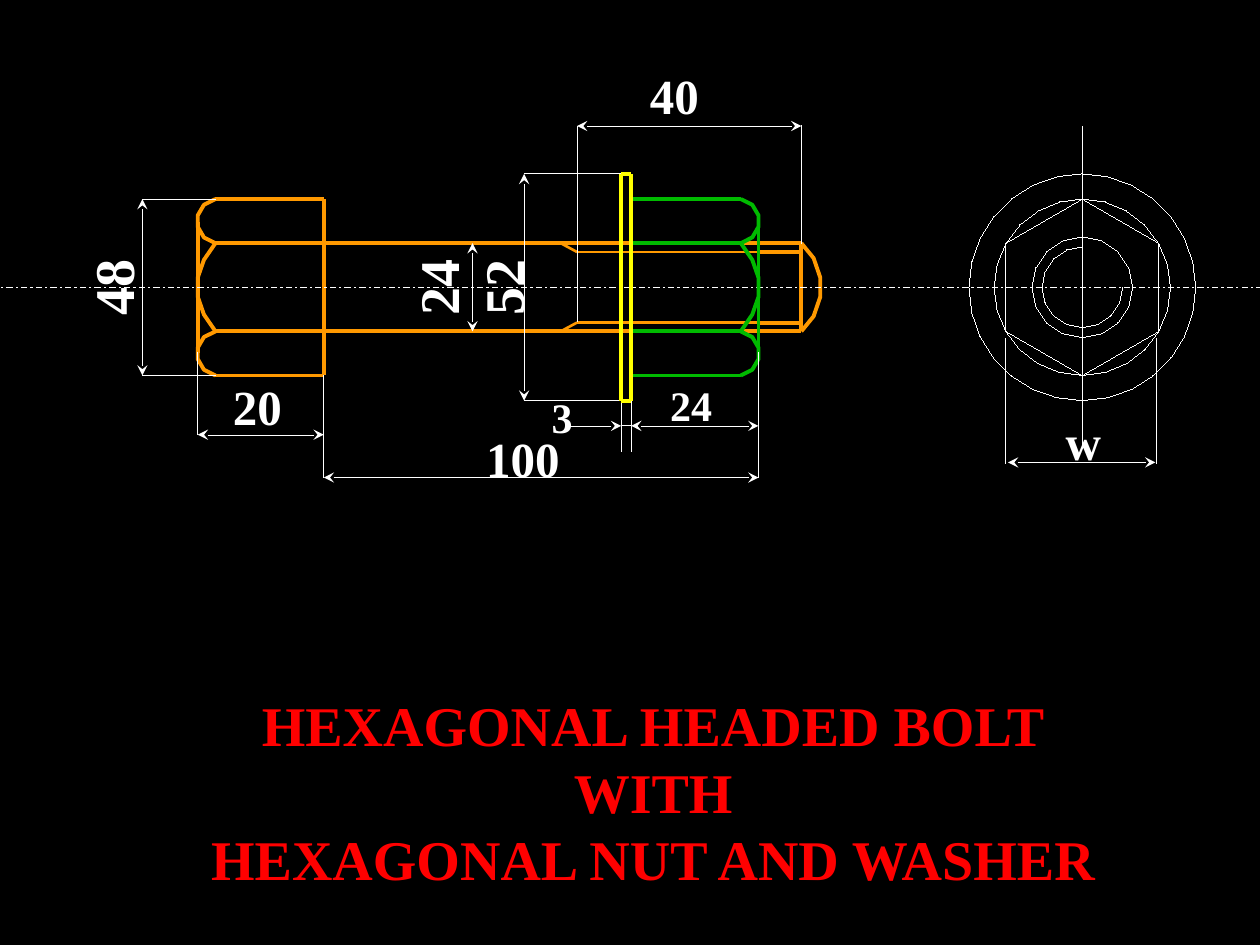
"""Draw a dimensioned hexagonal bolt with its nut and washer."""
import math

import pptx
import pptx.dml.color
import pptx.enum.dml
import pptx.enum.text
import pptx.oxml
import pptx.oxml.ns
import pptx.util
from pptx.util import Inches

Color = pptx.dml.color.RGBColor
BLACK = Color(0x00, 0x00, 0x00)
WHITE = Color(0xFF, 0xFF, 0xFF)
ORANGE = Color(0xFF, 0x99, 0x00)
GREEN = Color(0x00, 0xBA, 0x00)
YELLOW = Color(0xFF, 0xFF, 0x00)
RED = Color(0xFF, 0x00, 0x00)
FONT = "Times New Roman"
SPACE = pptx.oxml.ns.nsdecls("a")
HAIR = 0.01

AXIS = 2.28
TOP, UPPER, LOWER, BASE = 1.58, 1.93, 2.63, 2.98
HEAD, NECK = 1.57, 2.57
WASH, NUT, FACE = 4.93, 5.01, 6.02
THREAD, TIP = 4.58, 6.36
RIM_TOP, RIM_BASE = 1.38, 3.18
HUB = 8.59


def apply(target, values):
    """Set each attribute of the target from a dict."""
    for name, value in values.items():
        setattr(target, name, value)


def stroke(line, color, width):
    """Give a line its colour and width."""
    line.color.rgb = color
    line.width = pptx.util.Pt(width)


def draw_line(shapes, start, end, color=WHITE, width=HAIR, ends=(), dash=None):
    """Draw a straight line with optional arrowheads and dashes."""
    link = shapes.add_connector(1, *map(Inches, start + end))
    stroke(link.line, color, width)
    if dash:
        link.line.dash_style = dash
    props = link._element.spPr
    edge = props.find(pptx.oxml.ns.qn("a:ln"))
    for end_name in ends:
        edge.append(pptx.oxml.parse_xml(f'<a:{end_name} {SPACE} type="stealth"/>'))
    props.append(pptx.oxml.parse_xml(f"<a:effectLst {SPACE}/>"))


def draw_path(shapes, points, color=WHITE, width=HAIR):
    """Draw an unfilled outline through the points."""
    spots = [(Inches(x), Inches(y)) for x, y in points]
    pen = shapes.build_freeform(*spots[0])
    pen.add_line_segments(spots[1:], close=False)
    path = pen.convert_to_shape()
    path.fill.background()
    path.shadow.inherit = False
    stroke(path.line, color, width)


def draw_bow(shapes, x, top, tall, deep, near, far, color):
    """Draw a bulging end curve from top to bottom."""
    grid = [(0, 0), (0.65, near), (1, far), (1, 1 - far), (0.65, 1 - near), (0, 1)]
    points = [(x + deep * across, top + tall * down) for across, down in grid]
    draw_path(shapes, points, color, 2.25)


def draw_ring(shapes, size, count, start=0, sweep=360):
    """Draw a many-sided arc round the hub."""
    turns = [math.radians(start + sweep * step / count) for step in range(count + 1)]
    draw_path(shapes, [(HUB + size * math.cos(turn), AXIS - size * math.sin(turn))
                       for turn in turns])


def add_text(shapes, box, lines, size, color=WHITE, turn=0, wrap=False, align=None):
    """Add bold text, one paragraph for each line."""
    area = shapes.add_textbox(*map(Inches, box))
    area.rotation = turn
    frame = area.text_frame
    apply(frame, {"word_wrap": wrap, "text": "\n".join(lines),
                  "auto_size": pptx.enum.text.MSO_AUTO_SIZE.SHAPE_TO_FIT_TEXT})
    for para in frame.paragraphs:
        para.alignment = align
        font = para.runs[0].font
        apply(font, {"name": FONT, "size": pptx.util.Pt(size), "bold": True})
        font.color.rgb = color


def draw_size(slide, label, box, size, arrow, guides=(), turn=0,
              ends=("headEnd", "tailEnd")):
    """Draw a dimension with its guide lines and label."""
    shapes = slide.shapes.add_group_shape().shapes
    for start, end in guides:
        draw_line(shapes, start, end)
    draw_line(shapes, *arrow, ends=ends)
    add_text(shapes, box, [label], size, turn=turn)


def draw_hex(shapes, edge, back, face, color):
    """Draw the side view of a hexagonal block."""
    for y in (TOP, UPPER, LOWER, BASE):
        draw_line(shapes, (edge, y), (back, y), color, 2.25)
    draw_line(shapes, (face, 2.8), (face, 1.76), color, 2.25)
    for top, tall, near, far in ((TOP, 0.35, 0.13, 0.37), (UPPER, 0.7, 0.19, 0.39),
                                 (LOWER, 0.35, 0.13, 0.37)):
        draw_bow(shapes, edge, top, tall, face - edge, near, far, color)


def draw_bolt(slide):
    """Draw the bolt with head, shank and thread."""
    shapes = slide.shapes.add_group_shape().shapes
    draw_hex(shapes, 1.71, NECK, HEAD, ORANGE)
    draw_line(shapes, (NECK, BASE), (NECK, TOP), ORANGE, 2.25)
    for outer, inner in ((UPPER, 2), (LOWER, 2.56)):
        draw_line(shapes, (NECK, outer), (6.08, outer), ORANGE, 2.25)
        draw_line(shapes, (THREAD, inner), (6.08, inner), ORANGE, 1.5)
        draw_line(shapes, (THREAD, inner), (4.45, outer), ORANGE, 1.5)
        for y in (outer, inner):
            draw_line(shapes, (FACE, y), (TIP, y), ORANGE, 2.25)
    draw_line(shapes, (TIP, LOWER), (TIP, UPPER), ORANGE, 2.25)
    draw_bow(shapes, TIP, UPPER, 0.7, 0.15, 0.17, 0.39, ORANGE)


def draw_nut(slide):
    """Draw the nut in side view."""
    draw_hex(slide.shapes.add_group_shape().shapes, 5.88, NUT, FACE, GREEN)


def draw_washer(slide):
    """Draw the four edges of the washer."""
    shapes = slide.shapes.add_group_shape().shapes
    for y in (RIM_TOP, RIM_BASE):
        draw_line(shapes, (NUT, y), (WASH, y), YELLOW, 2.25)
    for x in (NUT, WASH):
        draw_line(shapes, (x, RIM_BASE), (x, RIM_TOP), YELLOW, 2.25)


def draw_sizes(slide):
    """Draw all dimensions of the side view."""
    draw_size(slide, "24", (3.14, 1.96, 0.65, 0.63), 32,
              ((3.75, LOWER), (3.75, UPPER)), turn=270)
    for label, left, x, edge, top, base in (("52", 3.66, 4.16, WASH, RIM_TOP, RIM_BASE),
                                            ("48", 0.56, 1.13, 1.71, TOP, BASE)):
        draw_size(slide, label, (left, 1.96, 0.65, 0.63), 32, ((x, base), (x, top)),
                  [((edge, y), (x, y)) for y in (base, top)], 270)
    draw_size(slide, "40", (5.06, 0.47, 0.59, 0.57), 28, ((THREAD, 1), (TIP, 1)),
              [((THREAD, 2.55), (THREAD, 1)), ((TIP, UPPER), (TIP, 1))])
    draw_size(slide, "20", (1.75, 2.94, 0.59, 0.57), 28, ((HEAD, 3.45), (NECK, 3.45)),
              [((HEAD, 2.8), (HEAD, 3.45)), ((NECK, BASE), (NECK, 3.79))])
    draw_size(slide, "100", (3.76, 3.35, 0.78, 0.57), 28, ((NECK, 3.79), (FACE, 3.79)),
              [((FACE, 2.8), (FACE, 3.79))])
    draw_size(slide, "24", (5.22, 2.96, 0.53, 0.5), 24, ((NUT, 3.38), (FACE, 3.38)),
              [((NUT, RIM_BASE), (NUT, 3.58))])
    draw_size(slide, "3", (4.28, 3.06, 0.37, 0.5), 24, ((WASH, 3.38), (4.51, 3.38)),
              [((WASH, RIM_BASE), (WASH, 3.58)), ((WASH, 3.38), (NUT, 3.38))],
              ends=("headEnd",))


def draw_view(slide):
    """Draw the end view and its width dimension."""
    shapes = slide.shapes.add_group_shape().shapes
    draw_ring(shapes, 0.7, 6, start=-30)
    for size, count in ((0.7, 24), (0.4, 16), (0.9, 28)):
        draw_ring(shapes, size, count)
    draw_ring(shapes, 0.32, 12, start=90, sweep=270)
    draw_line(shapes, (HUB, 1), (HUB, 3.56))
    for x in (7.98, 9.18):
        draw_line(shapes, (x, 2.69), (x, 3.68))
    draw_line(shapes, (8, 3.67), (9.17, 3.67), width=0.75, ends=("headEnd", "tailEnd"))
    add_text(shapes, (8.36, 3.22, 0.48, 0.57), ["w"], 28)


def main():
    """Build and save the slide."""
    deck = pptx.Presentation()
    apply(deck, {"slide_width": Inches(10), "slide_height": Inches(7.5)})
    slide = deck.slides.add_slide(deck.slide_layouts[6])
    slide.background.fill.solid()
    slide.background.fill.fore_color.rgb = BLACK
    draw_bolt(slide)
    draw_line(slide.shapes, (-0.18, AXIS), (10, AXIS),
              dash=pptx.enum.dml.MSO_LINE.DASH_DOT)
    draw_nut(slide)
    draw_sizes(slide)
    add_text(slide.shapes, (1.06, 5.43, 8.25, 1.7),
             ["HEXAGONAL HEADED BOLT", "WITH", "HEXAGONAL NUT AND WASHER"], 32, RED,
             wrap=True, align=pptx.enum.text.PP_ALIGN.CENTER)
    draw_view(slide)
    draw_washer(slide)
    deck.save("out.pptx")


if __name__ == "__main__":
    main()
